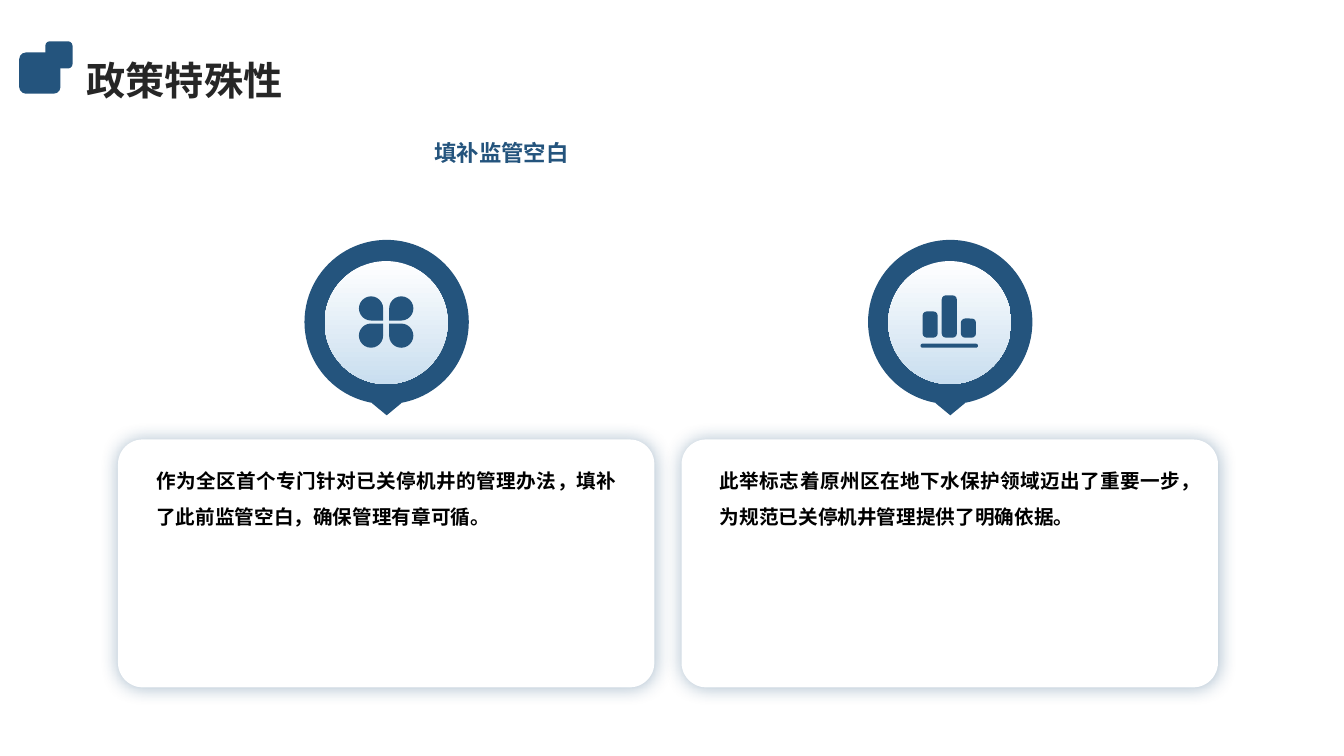
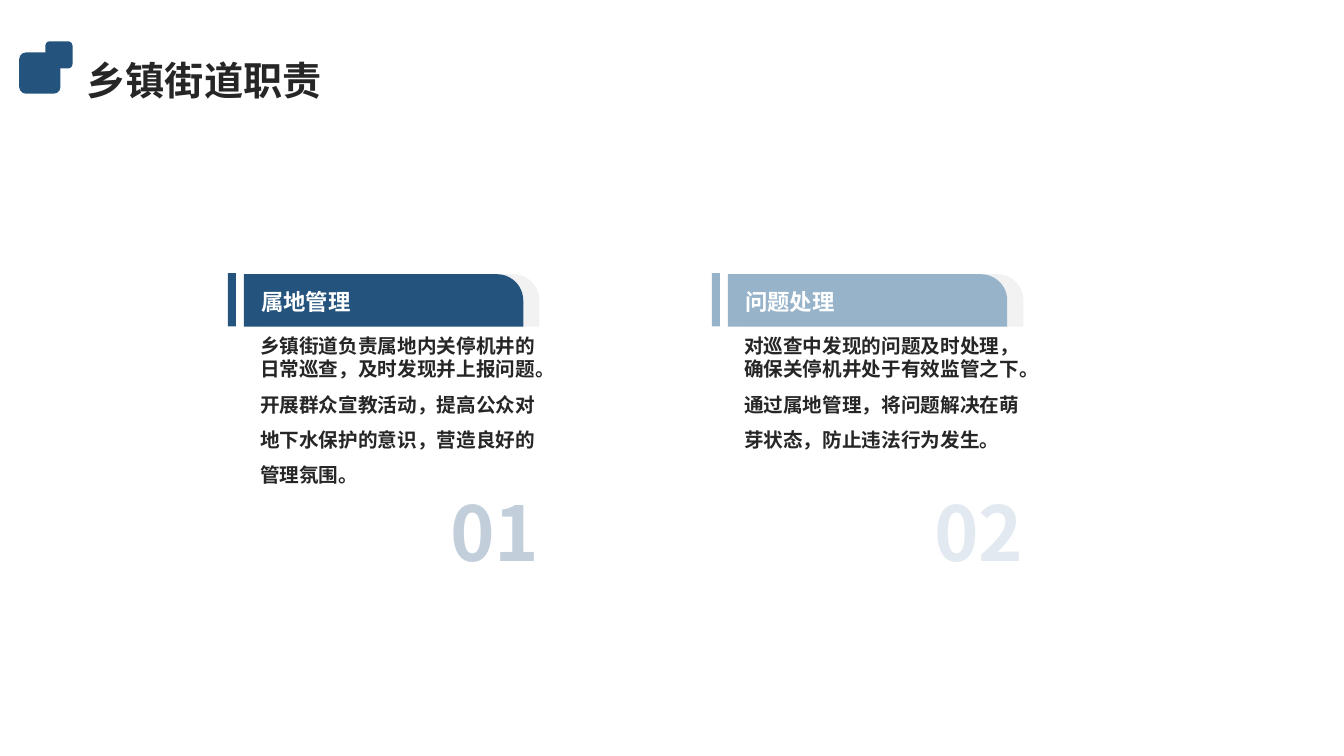
from lxml.etree import SubElement
from pptx import Presentation
from pptx.dml.color import RGBColor
from pptx.enum.shapes import MSO_SHAPE
from pptx.enum.text import MSO_ANCHOR, PP_ALIGN
from pptx.oxml.ns import qn
from pptx.util import Inches, Pt

NAVY = RGBColor(0x24, 0x54, 0x7D)
STEEL = RGBColor(0x97, 0xB3, 0xCA)
ICE = RGBColor(0xC9, 0xDE, 0xEF)
GREY = RGBColor(0xF2, 0xF2, 0xF2)
INK = RGBColor(0x26, 0x26, 0x26)
BLACK = RGBColor(0, 0, 0)
WHITE = RGBColor(0xFF, 0xFF, 0xFF)
FONT = "Noto Sans CJK SC"


def add_shape(shapes, kind, left, top, width, height, color, adjustment=None):
    shape = shapes.add_shape(kind, Inches(left), Inches(top), Inches(width), Inches(height))
    shape.shadow.inherit = False
    shape.fill.solid()
    shape.fill.fore_color.rgb = color
    shape.line.fill.background()
    if adjustment is not None:
        shape.adjustments[0] = adjustment
    return shape


def add_text(slide, text, left, top, width, height, size, color, spacings=(1.5,),
             anchor=MSO_ANCHOR.TOP, align=PP_ALIGN.LEFT, alpha=None):
    box = slide.shapes.add_textbox(Inches(left), Inches(top), Inches(width), Inches(height))
    frame = box.text_frame
    frame.word_wrap = True
    frame.vertical_anchor = anchor
    frame.margin_left = frame.margin_top = frame.margin_right = frame.margin_bottom = 0
    frame.text = text
    for paragraph, spacing in zip(frame.paragraphs, spacings):
        paragraph.alignment = align
        paragraph.line_spacing = spacing
        for run in paragraph.runs:
            run.font.size = Pt(size)
            run.font.bold = True
            run.font.color.rgb = color
            run.font.name = FONT
            properties = run.font._element
            properties.find(qn("a:latin")).addnext(
                properties.makeelement(qn("a:ea"), {"typeface": FONT}))
            if alpha is not None:
                tint = properties.find(qn("a:solidFill"))[0]
                SubElement(tint, qn("a:alpha"), val=str(alpha * 1000))


presentation = Presentation()
presentation.slide_width = Inches(13.33)
presentation.slide_height = Inches(7.5)

slides = []
for title in ("政策特殊性", "乡镇街道职责"):
    slide = presentation.slides.add_slide(presentation.slide_layouts[6])
    slide.background.fill.solid()
    slide.background.fill.fore_color.rgb = WHITE
    add_text(slide, title, 0.86, 0.51, 11.67, 0.51, 28, INK, (1.1,), MSO_ANCHOR.MIDDLE)
    mark = slide.shapes.add_group_shape()
    for left, top, side in ((0.19, 0.52, 0.41), (0.45, 0.41, 0.27)):
        add_shape(mark.shapes, MSO_SHAPE.ROUNDED_RECTANGLE, left, top, side, side, NAVY)
    slides.append(slide)
policy_slide, duty_slide = slides

add_text(policy_slide, "填补监管空白", 4.31, 1.03, 4.72, 0.88, 16, NAVY, (1.3,), MSO_ANCHOR.MIDDLE)

statements = (
    "作为全区首个专门针对已关停机井的管理办法，填补了此前监管空白，确保管理有章可循。",
    "此举标志着原州区在地下水保护领域迈出了重要一步，为规范已关停机井管理提供了明确依据。",
)
for index, statement in enumerate(statements):
    left = 1.17 + index * 5.59
    card = add_shape(policy_slide.shapes, MSO_SHAPE.ROUNDED_RECTANGLE, left, 4.36, 5.32, 2.46, WHITE, 0.1)
    effects = card._element.spPr.find(qn("a:effectLst"))
    glow = SubElement(effects, qn("a:outerShdw"), blurRad=str(Pt(13)), dist="0", dir="0",
                      algn="ctr", rotWithShape="0")
    glow_color = SubElement(glow, qn("a:srgbClr"), val=str(NAVY))
    SubElement(glow_color, qn("a:alpha"), val="40000")
    add_text(policy_slide, statement, left + 0.38, 4.54, 4.57, 2.14, 14, BLACK, align=PP_ALIGN.JUSTIFY)

    add_shape(policy_slide.shapes, MSO_SHAPE.OVAL, left + 1.85, 2.38, 1.63, 1.63, NAVY)
    disc = add_shape(policy_slide.shapes, MSO_SHAPE.OVAL, left + 2.05, 2.59, 1.22, 1.22, WHITE)
    disc.fill.gradient()
    disc.fill.gradient_angle = 270
    for stop, position, color in zip(disc.fill.gradient_stops, (0, 1), (WHITE, ICE)):
        stop.position = position
        stop.color.rgb = color
    pointer = add_shape(policy_slide.shapes, MSO_SHAPE.ISOSCELES_TRIANGLE, left + 2.52, 4, 0.29, 0.12, NAVY)
    pointer.rotation = 180

clover = policy_slide.shapes.add_group_shape()
for left, top, rotation in ((3.56, 2.94, 90), (3.86, 2.94, 180), (3.56, 3.21, 0), (3.86, 3.21, 270)):
    petal = add_shape(clover.shapes, MSO_SHAPE.TEAR, left, top, 0.24, 0.24, NAVY)
    petal.rotation = rotation

bar_icon = policy_slide.shapes.add_group_shape()
for index, height in enumerate((0.26, 0.42, 0.19)):
    add_shape(bar_icon.shapes, MSO_SHAPE.ROUNDED_RECTANGLE,
              9.15 + index * 0.19, 3.35 - height, 0.15, height, NAVY, 0.28)
add_shape(bar_icon.shapes, MSO_SHAPE.ROUNDED_RECTANGLE, 9.13, 3.41, 0.57, 0.04, NAVY, 0.5)

duties = (
    ("属地管理", NAVY,
     "乡镇街道负责属地内关停机井的日常巡查，及时发现并上报问题。\n"
     "开展群众宣教活动，提高公众对地下水保护的意识，营造良好的管理氛围。"),
    ("问题处理", STEEL,
     "对巡查中发现的问题及时处理，确保关停机井处于有效监管之下。\n"
     "通过属地管理，将问题解决在萌芽状态，防止违法行为发生。"),
)
for index, (heading, color, body) in enumerate(duties):
    left = 2.26 + index * 4.8
    add_text(duty_slide, body, left + 0.32, 3.31, 2.77, 2, 14, INK, (1.0, 1.5))
    for offset, band_color in ((0.32, GREY), (0.16, color)):
        add_shape(duty_slide.shapes, MSO_SHAPE.ROUND_1_RECTANGLE,
                  left + offset, 2.72, 2.77, 0.52, band_color, 0.5)
    add_text(duty_slide, heading, left + 0.33, 2.57, 3.66, 0.71, 16, WHITE, anchor=MSO_ANCHOR.MIDDLE)
    add_shape(duty_slide.shapes, MSO_SHAPE.RECTANGLE, left, 2.71, 0.08, 0.53, color)
    add_text(duty_slide, f"{index + 1:02}", left + 0.35, 4.6, 2.74, 1.12, 54, color,
             anchor=MSO_ANCHOR.BOTTOM, align=PP_ALIGN.RIGHT, alpha=27)

presentation.save("out.pptx")
